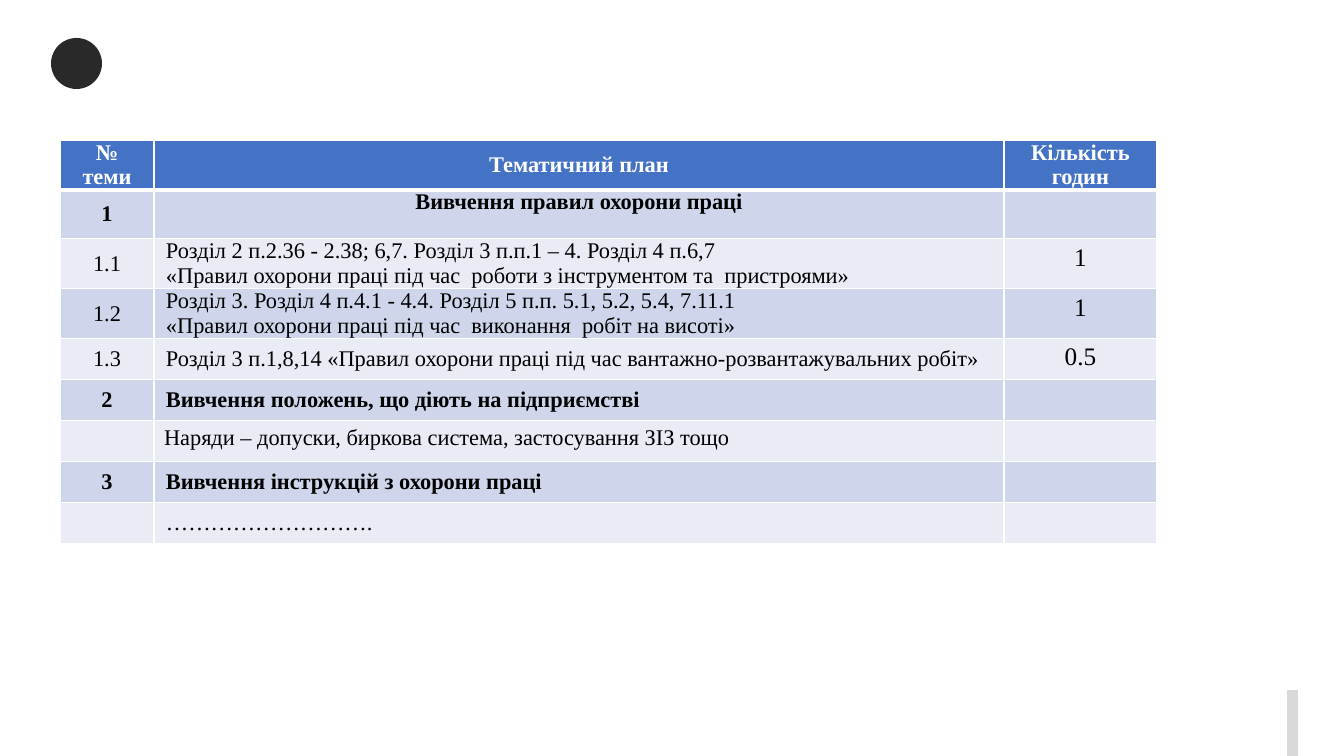
from dataclasses import dataclass

from lxml.etree import SubElement
from pptx import Presentation
from pptx.dml.color import RGBColor
from pptx.enum.shapes import MSO_SHAPE
from pptx.enum.text import MSO_ANCHOR, PP_ALIGN
from pptx.oxml.ns import qn
from pptx.slide import Slide
from pptx.table import _Cell
from pptx.util import Emu, Pt

EMU_PER_PX = 9071
FONT_NAME = "Times New Roman"
WHITE = RGBColor(0xFF, 0xFF, 0xFF)
BLACK = RGBColor(0x00, 0x00, 0x00)
DOT_COLOR = RGBColor(0x29, 0x29, 0x29)
BAR_COLOR = RGBColor(0xD9, 0xD9, 0xD9)
HEADER_FILL = RGBColor(0x44, 0x72, 0xC4)
BAND_FILLS = (RGBColor(0xE9, 0xEB, 0xF5), RGBColor(0xCF, 0xD5, 0xEA))

TABLE_LEFT, TABLE_TOP = 60, 140
COLUMN_WIDTHS = (94, 850, 153)
SINGLE_ROW, DOUBLE_ROW = 41, 49
TOPIC_INDENT = 5
TIGHT_MARGINS = {"margin_left": 7, "margin_right": 7, "margin_top": 0, "margin_bottom": 0}


@dataclass(frozen=True)
class Decoration:
    preset: MSO_SHAPE
    left: int
    top: int
    width: int
    height: int
    color: RGBColor


@dataclass(frozen=True)
class CellStyle:
    size: int = 16
    bold: bool = False
    color: RGBColor = BLACK
    align: PP_ALIGN = PP_ALIGN.CENTER
    anchor: MSO_ANCHOR = MSO_ANCHOR.MIDDLE
    tight: bool = True
    indent: int = 0


HEADER = CellStyle(bold=True, color=WHITE)
NUMBER = CellStyle()
BOLD_NUMBER = CellStyle(bold=True)
SECTION_TITLE = CellStyle(bold=True, anchor=MSO_ANCHOR.TOP)
TOPIC = CellStyle(align=PP_ALIGN.LEFT, indent=TOPIC_INDENT)
JUSTIFIED_TOPIC = CellStyle(align=PP_ALIGN.JUSTIFY, indent=TOPIC_INDENT)
BOLD_TOPIC = CellStyle(bold=True, align=PP_ALIGN.JUSTIFY, indent=TOPIC_INDENT)
PLAIN_TOPIC = CellStyle(align=PP_ALIGN.LEFT, anchor=MSO_ANCHOR.TOP, tight=False)
HOURS = CellStyle(size=18, anchor=MSO_ANCHOR.TOP, tight=False)


@dataclass(frozen=True)
class PlanRow:
    number: str
    topic: str
    hours: str = ""
    number_style: CellStyle = NUMBER
    topic_style: CellStyle = JUSTIFIED_TOPIC
    hours_style: CellStyle = HOURS
    height: int = SINGLE_ROW


DECORATIONS = (
    Decoration(MSO_SHAPE.OVAL, 51, 38, 51, 51, DOT_COLOR),
    Decoration(MSO_SHAPE.RECTANGLE, 1287, 690, 11, 66, BAR_COLOR),
)

PLAN_ROWS = (
    PlanRow("№\nтеми", "Тематичний план", "Кількість\nгодин", HEADER, HEADER, HEADER, DOUBLE_ROW),
    PlanRow("1", "Вивчення правил охорони праці", "", BOLD_NUMBER, SECTION_TITLE, height=DOUBLE_ROW),
    PlanRow(
        "1.1",
        "Розділ 2 п.2.36 - 2.38; 6,7. Розділ 3 п.п.1 – 4. Розділ 4 п.6,7\n"
        "«Правил охорони праці під час  роботи з інструментом та  пристроями»",
        "1", topic_style=TOPIC, height=DOUBLE_ROW,
    ),
    PlanRow(
        "1.2",
        "Розділ 3. Розділ 4 п.4.1 - 4.4. Розділ 5 п.п. 5.1, 5.2, 5.4, 7.11.1\n"
        "«Правил охорони праці під час  виконання  робіт на висоті»",
        "1", height=DOUBLE_ROW,
    ),
    PlanRow(
        "1.3",
        "Розділ 3 п.1,8,14 «Правил охорони праці під час вантажно-розвантажувальних робіт»",
        "0.5",
    ),
    PlanRow("2", "Вивчення положень, що діють на підприємстві", "", BOLD_NUMBER, BOLD_TOPIC),
    PlanRow("", "Наряди – допуски, биркова система, застосування ЗІЗ тощо", topic_style=PLAIN_TOPIC),
    PlanRow("3", "Вивчення інструкцій з охорони праці", "", BOLD_NUMBER, BOLD_TOPIC),
    PlanRow("", "…" * 9 + "."),
)


def px(length: int) -> Emu:
    return Emu(length * EMU_PER_PX)


def add_decoration(slide: Slide, decoration: Decoration) -> None:
    shape = slide.shapes.add_shape(
        decoration.preset, px(decoration.left), px(decoration.top),
        px(decoration.width), px(decoration.height),
    )
    shape.shadow.inherit = False
    shape.fill.solid()
    shape.fill.fore_color.rgb = decoration.color
    shape.line.fill.background()


def set_borders(cell: _Cell, top_width: int, bottom_width: int) -> None:
    properties = cell._tc.get_or_add_tcPr()
    widths = {"a:lnL": 1, "a:lnR": 1, "a:lnT": top_width, "a:lnB": bottom_width}
    for position, (tag, width) in enumerate(widths.items()):
        border = SubElement(properties, qn(tag), w=str(Pt(width)))
        fill = SubElement(border, qn("a:solidFill"))
        SubElement(fill, qn("a:srgbClr"), val=str(WHITE))
        properties.insert(position, border)


def write_cell(cell: _Cell, text: str, style: CellStyle, fill: RGBColor) -> None:
    cell.fill.solid()
    cell.fill.fore_color.rgb = fill
    cell.vertical_anchor = style.anchor
    if style.tight:
        for name, margin in TIGHT_MARGINS.items():
            setattr(cell, name, px(margin))
    cell.text_frame.text = text
    font_format = {"name": FONT_NAME, "size": Pt(style.size), "bold": style.bold}
    for paragraph in cell.text_frame.paragraphs:
        paragraph.alignment = style.align
        if style.indent:
            paragraph._p.get_or_add_pPr().set("marL", str(px(style.indent)))
        for name, value in font_format.items():
            setattr(paragraph.font, name, value)
        paragraph.font.color.rgb = style.color


def add_plan_table(slide: Slide, plan_rows: tuple[PlanRow, ...]) -> None:
    table = slide.shapes.add_table(
        len(plan_rows), len(COLUMN_WIDTHS), px(TABLE_LEFT), px(TABLE_TOP),
        px(sum(COLUMN_WIDTHS)), px(sum(row.height for row in plan_rows)),
    ).table
    for column, width in zip(table.columns, COLUMN_WIDTHS):
        column.width = px(width)
    for index, plan_row in enumerate(plan_rows):
        table.rows[index].height = px(plan_row.height)
        fill = BAND_FILLS[index % 2] if index else HEADER_FILL
        contents = (
            (plan_row.number, plan_row.number_style),
            (plan_row.topic, plan_row.topic_style),
            (plan_row.hours, plan_row.hours_style),
        )
        for cell, (text, style) in zip(table.rows[index].cells, contents):
            write_cell(cell, text, style, fill)
            set_borders(cell, 3 if index == 1 else 1, 3 if index == 0 else 1)


def main() -> None:
    presentation = Presentation()
    presentation.slide_width = px(1344)
    presentation.slide_height = px(756)
    slide = presentation.slides.add_slide(presentation.slide_layouts[6])
    for decoration in DECORATIONS:
        add_decoration(slide, decoration)
    add_plan_table(slide, PLAN_ROWS)
    presentation.save("out.pptx")


if __name__ == "__main__":
    main()
